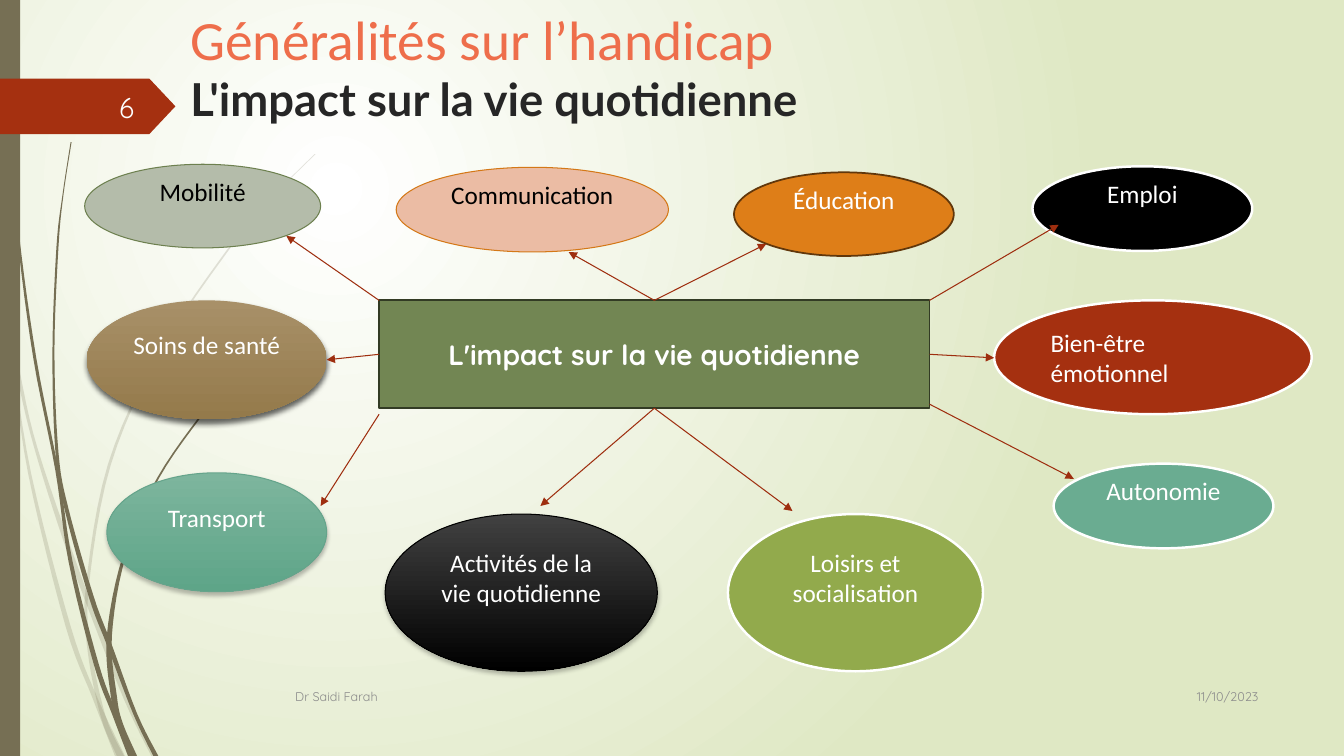
import pptx
import pptx.util
import pptx.oxml
import pptx.oxml.ns
import pptx.dml.color
import pptx.enum.shapes
import pptx.enum.text

WIDE, HIGH = 13.33, 7.5  # one-inch columns and rows
HUES = {
    "white": "FFFFFF", "black": "000000", "lime": "DFE8C4", "wood": "766F54",
    "red": "A53010", "arrow": "9E2E0F", "coral": "EE6E4B", "ink": "262626",
    "grey": "8C8C8C", "sage": "B4BCAA", "moss": "6D804F", "peach": "EBBCA4",
    "amber": "D47817", "tan": "A89068", "brown": "947A4B", "coal": "414141",
    "olive": "92AA4C", "teal": "6AAC91", "orange": "DE7E18", "rust": "61370B",
    "mint": "7DB59D", "jade": "5EA588", "edge": "65A48B", "green": "728653",
    "dark": "323B24", "page": "FEFFFF",
}
MAIN = "L'impact sur la vie quotidienne"
SHAPE = pptx.enum.shapes.MSO_SHAPE
ALIGN = pptx.enum.text.PP_ALIGN
ANCHOR = pptx.enum.text.MSO_ANCHOR

# Stems from top to bottom: column, row, width
PALE = [
    [(0, 2.9, .03), (.11, 3.45, .04), (.3, 4.3, .03), (.58, 5.22, .05), (.86, 6, .05),
     (1.23, 6.94, .04), (1.5, 7.5, .05)],
    [(.11, 3.5, .01), (.28, 4.7, .03), (.65, 6.21, .05), (.92, 6.93, .05), (1.14, 7.5, .1)],
    [(3.12, 1.53, .01), (2.68, 1.97, .01), (2.28, 2.44, .02), (1.58, 3.48, .02),
     (1.07, 4.61, .03), (.85, 5.84, .03), (.87, 6.46, .04), (1, 7.11, .05), (1.16, 7.5, .07)],
]
DEEP = [
    [(.03, 0, .01), (.04, .48, .01), (.07, 1.1, .01), (.17, 2.33, .02), (.33, 3.55, .03),
     (.55, 4.67, .03), (.68, 5.57, .04), (.93, 6.59, .05), (1.11, 7.08, .05), (1.27, 7.5, .06)],
    [(.7, 1.41, .01), (.62, 1.93, .01), (.56, 2.45, .02), (.52, 3.49, .02), (.55, 4.49, .03),
     (.64, 5.05, .04), (.88, 5.92, .05), (1.06, 6.4, .05), (1.32, 7.08, .04), (1.52, 7.5, .05)],
    [(2.6, 3.44, .01), (2.31, 3.73, .01), (2.04, 4.05, .02), (1.56, 4.74, .02),
     (1.22, 5.51, .03), (1.06, 6.31, .05), (1.1, 6.91, .06), (1.17, 7.18, .05),
     (1.29, 7.5, .07)],
]
# Words, place, fill, line, text hue, shadow (alpha, blur, distance)
THEMES = [
    ("Mobilité", (.84, 1.63, 2.34, .83), ["sage"], ("moss", .75), "black", None),
    ("Communication", (3.93, 1.66, 2.7, .84), ["peach"], ("amber", .75), "black", None),
    ("Soins de santé", (.86, 2.98, 2.38, 1.18), ["tan", "brown"], None, "white", (60, 4, 3)),
    ("Activités de la vie quotidienne", (3.82, 5.1, 2.7, 1.56), ["coal", "black"],
     ("black", .75), "white", (25, 3, 2)),
    ("Loisirs et socialisation", (7.22, 5.1, 2.53, 1.56), ["olive"], ("white", 1.75),
     "white", None),
    ("Autonomie", (10.45, 4.6, 2.18, .84), ["teal"], ("white", 1.75), "white", None),
    ("Emploi", (10.24, 1.65, 2.18, .84), ["black"], ("white", 1.75), "white", None),
    ("Éducation", (7.28, 1.71, 2.18, .83), ["orange"], ("rust", 1.25), "white", None),
    ("Bien-être émotionnel", (9.86, 2.98, 3.15, 1.13), ["red"], ("white", 1.75),
     "white", None),
    ("Transport", (1.06, 4.69, 2.18, 1.18), ["mint", "jade"], ("edge", .75), "white",
     (25, 3, 2)),
]
# Start, end, side of the box that the start is joined to
ARROWS = [
    ((3.76, 2.98), (2.84, 2.34), None), ((3.76, 3.52), (3.24, 3.57), 1),
    ((3.76, 4.11), (3.18, 5.02), None), ((9.22, 4.01), (10.65, 4.75), None),
    ((6.49, 4.05), (7.86, 5.07), 2), ((6.49, 4.05), (5.36, 5.02), 2),
    ((9.22, 2.98), (10.5, 2.23), None), ((6.49, 2.98), (5.64, 2.5), 0),
    ((6.49, 2.98), (7.6, 2.42), 0), ((9.22, 3.52), (9.86, 3.55), 3),
]


def cells(*sizes):
    return [pptx.util.Inches(size) for size in sizes]


def hue(name):
    return pptx.dml.color.RGBColor.from_string(HUES[name])


def node(text):
    """Parse a fragment of drawing XML."""
    head, tail = text.split(" ", 1)
    return pptx.oxml.parse_xml(f"{head} {pptx.oxml.ns.nsdecls('a')} {tail}")


def blend(fill, names):
    fill.gradient()
    for spot, (stop, name) in enumerate(zip(fill.gradient_stops, names)):
        stop.position = spot
        stop.color.rgb = hue(name)


def paint(shape, names, line=None):
    shape.shadow.inherit = False
    if len(names) > 1:
        blend(shape.fill, names)
        shape.fill.gradient_angle = 270
    else:
        shape.fill.solid()
        shape.fill.fore_color.rgb = hue(names[0])
    if line:
        shape.line.color.rgb = hue(line[0])
        shape.line.width = pptx.util.Pt(line[1])
    else:
        shape.line.fill.background()


def write(para, words, size, font, name, bold=False, align=ALIGN.LEFT):
    para.alignment = align
    run = para.add_run()
    run.text = words
    run.font.size = pptx.util.Pt(size)
    run.font.name = font
    run.font.bold = bold
    run.font.color.rgb = hue(name)


def label(slide, place, lines, anchor=ANCHOR.MIDDLE):
    frame = slide.shapes.add_textbox(*cells(*place)).text_frame
    frame.word_wrap = True
    frame.vertical_anchor = anchor
    for spot, line in enumerate(lines):
        write(frame.add_paragraph() if spot else frame.paragraphs[0], *line)


def block(slide, kind, place, names, line=None):
    shape = slide.shapes.add_shape(kind, *cells(*place))
    paint(shape, names, line)
    shape.text_frame.word_wrap = True
    shape.text_frame.vertical_anchor = ANCHOR.MIDDLE
    return shape


def curve(knots, steps=6):
    """Smooth the knots with a Catmull-Rom spline."""
    ends = [knots[0], *knots, knots[-1]]
    for a, b, c, d in zip(ends, ends[1:], ends[2:], ends[3:]):
        for t in (step / steps for step in range(steps)):
            yield [q + t * (r - p + t * (2*p - 5*q + 4*r - s + t * (3*q - p - 3*r + s))) / 2
                   for p, q, r, s in zip(a, b, c, d)]
    yield knots[-1]


def stem(slide, knots, alpha):
    spots = list(curve(knots))
    rim = [cells(x, y) for x, y, _ in spots]
    rim += [cells(x + w, y) for x, y, w in reversed(spots)]
    build = slide.shapes.build_freeform(*rim[0])
    build.add_line_segments(rim[1:], close=True)
    shape = build.convert_to_shape()
    paint(shape, ["wood"])
    if alpha < 100:
        color = shape.element.spPr.find(".//" + pptx.oxml.ns.qn("a:srgbClr"))
        color.append(node(f'<a:alpha val="{alpha * 1000}"/>'))


def theme(slide, words, place, names, line, ink, shade):
    shape = block(slide, SHAPE.OVAL, place, names, line)
    left = words.startswith("Bien")
    if not left:
        shape.text_frame.margin_bottom = pptx.util.Inches(.35)
    write(shape.text_frame.paragraphs[0], words, 18, "Calibri", ink,
          align=ALIGN.LEFT if left else ALIGN.CENTER)
    if shade:
        alpha, blur, gap = shade
        shape.element.spPr.find(pptx.oxml.ns.qn("a:effectLst")).append(node(
            f'<a:outerShdw blurRad="{blur * 12700}" dist="{gap * 12700}" dir="5400000">'
            f'<a:srgbClr val="{HUES["black"]}"><a:alpha val="{alpha * 1000}"/>'
            '</a:srgbClr></a:outerShdw>'))


def arrow(slide, box, start, end, side):
    link = slide.shapes.add_connector(
        pptx.enum.shapes.MSO_CONNECTOR.STRAIGHT, *cells(*start, *end))
    if side is not None:
        link.begin_connect(box, side)
    link.line.color.rgb = hue("arrow")
    link.line.width = pptx.util.Pt(.75)
    link.line._get_or_add_ln().append(node('<a:tailEnd type="triangle"/>'))
    link._element.spPr.append(node("<a:effectLst />"))


def glow(slide):
    """Fill the background with light that spreads from the upper left."""
    blend(slide.background.fill, ["white", "lime"])
    lin = slide.element.find(".//" + pptx.oxml.ns.qn("a:lin"))
    lin.getparent().replace(lin, node(
        '<a:path path="circle"><a:fillToRect l="50000" t="50000" r="100000" b="100000"/>'
        '</a:path>'))


def main():
    deck = pptx.Presentation()
    deck.slide_width, deck.slide_height = cells(WIDE, HIGH)
    slide = deck.slides.add_slide(deck.slide_layouts[6])
    glow(slide)
    for stems, alpha in ((PALE, 20), (DEEP, 100)):
        for knots in stems:
            stem(slide, knots, alpha)
    block(slide, SHAPE.RECTANGLE, (0, 0, .2, HIGH), ["wood"])
    tag = block(slide, SHAPE.PENTAGON, (0, .78, 1.74, .55), ["red"])
    tag.adjustments[0] = .47
    label(slide, (1.79, 0, 9.75, 1.4), [
        ("Généralités sur l’handicap", 39.6, "Calibri", "coral"),
        (MAIN, 32.4, "Lato", "ink", True)], ANCHOR.TOP)
    label(slide, (11.33, 6.7, 1.25, .41),
          [("11/10/2023", 9, "Quicksand", "grey", False, ALIGN.RIGHT)])
    label(slide, (2.83, 6.71, 8.33, .4), [("Dr Saidi Farah", 9, "Quicksand", "grey")])
    label(slide, (.58, .86, .85, .4), [("6", 20, "Quicksand", "page", False, ALIGN.RIGHT)])
    for item in THEMES:
        theme(slide, *item)
    box = block(slide, SHAPE.RECTANGLE, (3.76, 2.98, 5.46, 1.07), ["green"], ("dark", 1.25))
    write(box.text_frame.paragraphs[0], MAIN, 20, "Quicksand", "white", True, ALIGN.CENTER)
    for item in ARROWS:
        arrow(slide, box, *item)
    deck.save("out.pptx")


if __name__ == "__main__":
    main()
